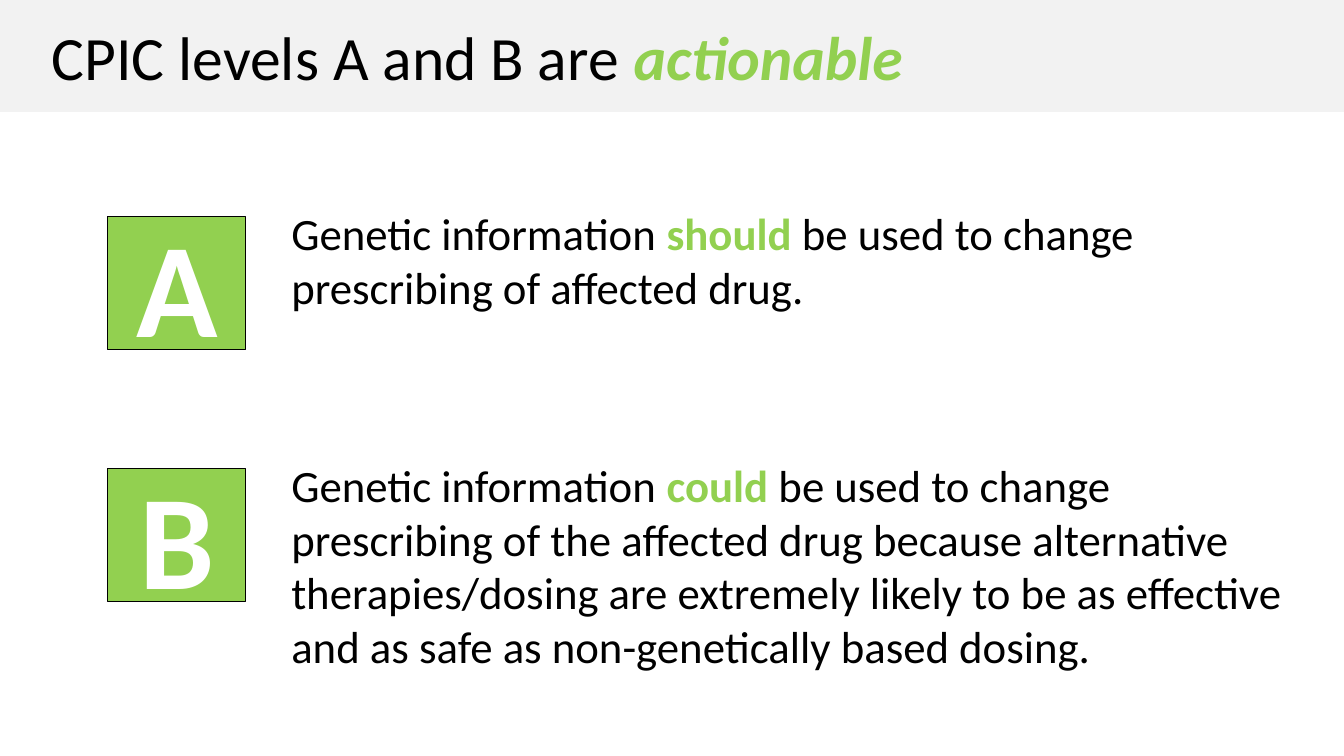
"""Build the slide on actionable CPIC levels."""
from pptx import Presentation
from pptx.dml.color import RGBColor
from pptx.enum.shapes import MSO_SHAPE
from pptx.enum.text import MSO_ANCHOR, PP_ALIGN
from pptx.util import Pt

TITLE = ("CPIC levels A and B are ", "actionable")
LEVELS = [
    ("A", 85, ("Genetic information ", "should",
               " be used to change prescribing of affected drug.")),
    ("B", 163, ("Genetic information ", "could",
                " be used to change prescribing of the affected drug because "
                "alternative therapies/dosing are extremely likely to be as "
                "effective and as safe as non-genetically based dosing.")),
]
GREEN, BLACK, WHITE, GREY = "92D050", "000000", "FFFFFF", "F2F2F2"
WIDE, HIGH, BAND = 960, 540, 80
TOP, STEP, RISE = 154.8, 180, 11.5


def color(code):
    return RGBColor.from_string(code)


def paint(shape, code):
    shape.fill.solid()
    shape.fill.fore_color.rgb = color(code)


def style(run, size, code, bold=False, slant=False):
    font = run.font
    font.name, font.size = "Calibri", Pt(size)
    font.bold, font.italic = bold, slant
    font.color.rgb = color(code)


def write(frame, parts, size, slant=False):
    para = frame.paragraphs[0]
    para.alignment = PP_ALIGN.LEFT
    for spot, part in enumerate(parts):
        run = para.add_run()
        run.text = part
        key = spot == 1
        style(run, size, GREEN if key else BLACK, key, key and slant)


def add_badge(slide, letter, top):
    badge = slide.shapes.add_shape(
        MSO_SHAPE.RECTANGLE, Pt(77), Pt(top), Pt(98.5), Pt(95))
    badge.shadow.inherit = False
    paint(badge, GREEN)
    badge.line.color.rgb = color(BLACK)
    badge.line.width = Pt(1)
    frame = badge.text_frame
    frame.text = letter
    frame.vertical_anchor = MSO_ANCHOR.MIDDLE
    para = frame.paragraphs[0]
    para.alignment = PP_ALIGN.CENTER
    style(para.runs[0], 96, WHITE, True)


def main():
    deck = Presentation()
    deck.slide_width, deck.slide_height = Pt(WIDE), Pt(HIGH)
    slide = deck.slides.add_slide(deck.slide_layouts[5])

    title = slide.shapes.title
    title.left, title.top = Pt(0), Pt(0)
    title.width, title.height = Pt(WIDE), Pt(BAND)
    paint(title, GREY)
    frame = title.text_frame
    frame.margin_left = Pt(37)
    frame.vertical_anchor = MSO_ANCHOR.MIDDLE
    write(frame, TITLE, 44, True)

    for row, (letter, tall, parts) in enumerate(LEVELS):
        top = TOP + row * STEP
        add_badge(slide, letter, top)
        note = slide.shapes.add_textbox(
            Pt(201), Pt(top - RISE), Pt(736.5), Pt(tall))
        note.text_frame.word_wrap = True
        write(note.text_frame, parts, 32)

    deck.save("out.pptx")


if __name__ == "__main__":
    main()
